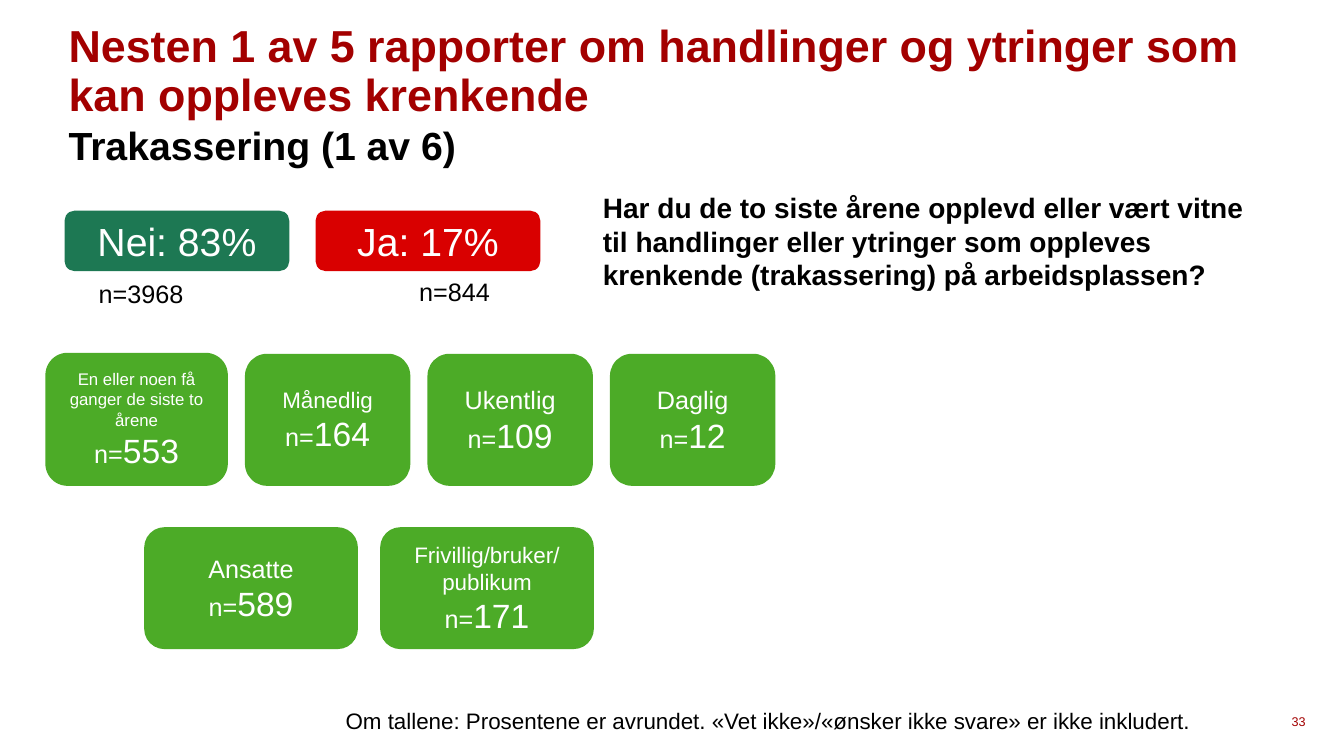
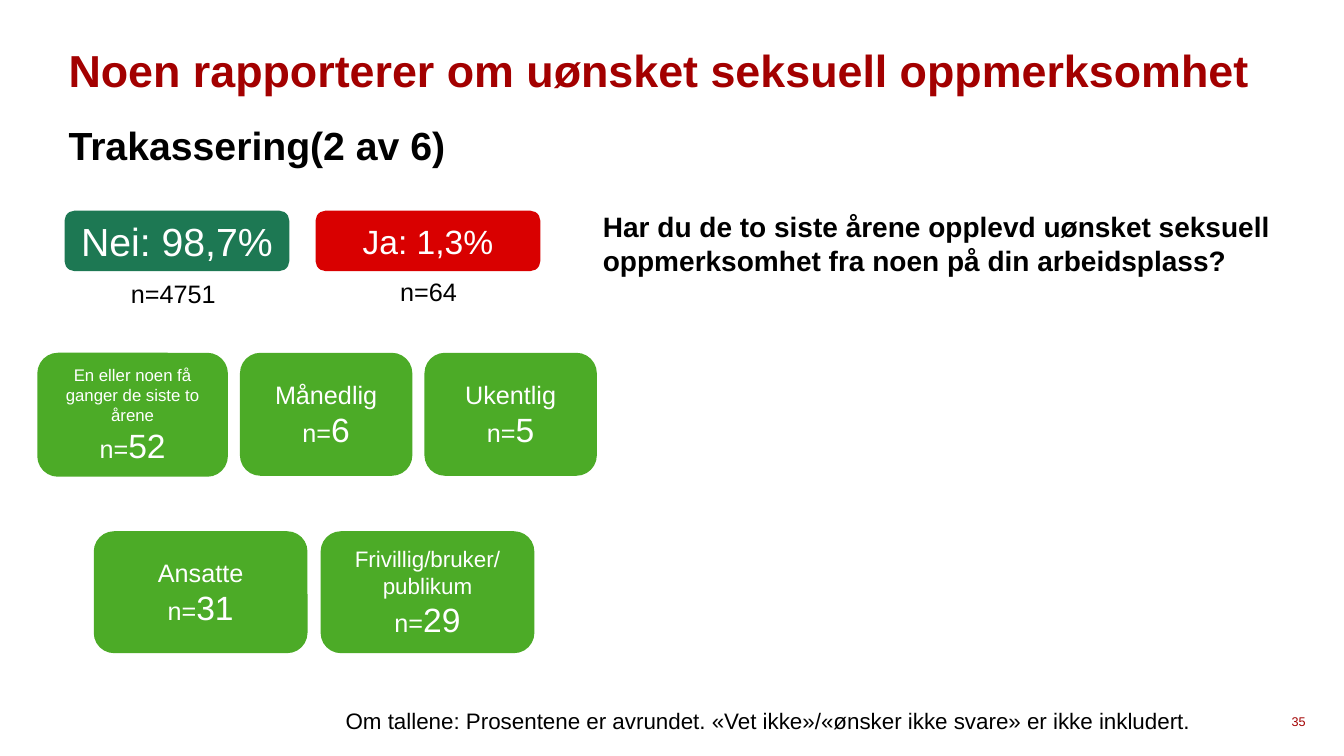
from dataclasses import dataclass

from pptx import Presentation
from pptx.dml.color import RGBColor
from pptx.enum import shapes, text
from pptx.util import Inches, Pt

FONT = "Arial"
TITLE_RED, YES_RED = "A30000", "D90000"
NO_GREEN, CARD_GREEN = "1D7853", "4CAB27"
BLACK, WHITE = "000000", "FFFFFF"
FOOTNOTE = (
    "Om tallene: Prosentene er avrundet. «Vet ikke»/«ønsker ikke svare» "
    "er ikke inkludert."
)
ROUNDED = shapes.MSO_SHAPE.ROUNDED_RECTANGLE
ALTERNATE = shapes.MSO_SHAPE.FLOWCHART_ALTERNATE_PROCESS


@dataclass(frozen=True)
class Area:
    left: float
    top: float
    width: float
    height: float

    def lengths(self):
        return [Inches(n) for n in (self.left, self.top, self.width, self.height)]


@dataclass(frozen=True)
class Span:
    words: str
    size: float
    colour: str = BLACK
    bold: bool = False


@dataclass(frozen=True)
class Card:
    caption: tuple[str, ...]
    size: float
    count: int


@dataclass(frozen=True)
class CardRow:
    first: Area
    step: float
    shape: shapes.MSO_SHAPE
    cards: tuple[Card, ...]


@dataclass(frozen=True)
class Answer:
    label: str
    size: float
    count: int
    count_left: float


@dataclass(frozen=True)
class Survey:
    title: str
    subtitle: str
    number: int
    question: str
    question_top: float
    no: Answer
    yes: Answer
    rows: tuple[CardRow, ...]


def colour_of(value):
    return RGBColor.from_string(value)


def write(frame, lines, align=text.PP_ALIGN.LEFT, spacing=None):
    """Write each list of spans as one paragraph."""
    for index, spans in enumerate(lines):
        para = frame.paragraphs[0] if index == 0 else frame.add_paragraph()
        para.alignment = align
        if spacing:
            para.line_spacing = spacing
        for span in spans:
            run = para.add_run()
            run.text = span.words
            run.font.name = FONT
            run.font.size = Pt(span.size)
            run.font.bold = span.bold
            run.font.color.rgb = colour_of(span.colour)


def add_text(page, area: Area, span: Span, inset=False,
             anchor=text.MSO_ANCHOR.TOP, spacing=None):
    frame = page.shapes.add_textbox(*area.lengths()).text_frame
    frame.word_wrap = True
    frame.vertical_anchor = anchor
    if not inset:
        frame.margin_left = frame.margin_right = 0
        frame.margin_top = frame.margin_bottom = 0
    write(frame, [[span]], spacing=spacing)


def add_tile(page, area: Area, shape, fill: str, lines):
    tile = page.shapes.add_shape(shape, *area.lengths())
    tile.shadow.inherit = False
    tile.fill.solid()
    tile.fill.fore_color.rgb = colour_of(fill)
    tile.line.fill.background()
    tile.text_frame.word_wrap = True
    tile.text_frame.vertical_anchor = text.MSO_ANCHOR.MIDDLE
    write(tile.text_frame, lines, text.PP_ALIGN.CENTER)


def add_answer(page, answer: Answer, left: float, fill: str, count_top: float):
    add_tile(page, Area(left, 2.09, 2.23, 0.6), ROUNDED, fill,
             [[Span(answer.label, answer.size, WHITE)]])
    add_text(page, Area(answer.count_left, count_top, 1.1, 0.4),
             Span(f"n={answer.count}", 18), inset=True)


def add_row(page, row: CardRow):
    for index, card in enumerate(row.cards):
        area = Area(row.first.left + index * row.step, row.first.top,
                    row.first.width, row.first.height)
        lines = [[Span(words, card.size, WHITE)] for words in card.caption]
        lines.append([Span("n=", 18, WHITE), Span(str(card.count), 24, WHITE)])
        add_tile(page, area, row.shape, CARD_GREEN, lines)


def add_survey(deck, survey: Survey):
    page = deck.slides.add_slide(deck.slide_layouts[6])
    middle = text.MSO_ANCHOR.MIDDLE
    add_text(page, Area(0.68, 0.25, 12.29, 0.94),
             Span(survey.title, 32, TITLE_RED, True), anchor=middle, spacing=0.9)
    add_text(page, Area(0.68, 1.2, 11.97, 0.71),
             Span(survey.subtitle, 28, bold=True))
    add_text(page, Area(5.98, survey.question_top, 6.67, 0.97),
             Span(survey.question, 20, bold=True))
    add_answer(page, survey.no, 0.64, NO_GREEN, 2.71)
    add_answer(page, survey.yes, 3.13, YES_RED, 2.69)
    for row in survey.rows:
        add_row(page, row)
    add_text(page, Area(3.33, 6.97, 8.68, 0.37), Span(FOOTNOTE, 16), inset=True)
    add_text(page, Area(12.81, 7.04, 0.38, 0.23),
             Span(str(survey.number), 9, TITLE_RED), anchor=middle)


def seldom(area: Area, count: int) -> CardRow:
    caption = ("En eller noen få ganger de siste to årene",)
    return CardRow(area, 0, ALTERNATE, (Card(caption, 12, count),))


def sources(left: float, top: float, step: float, staff: int, others: int) -> CardRow:
    """Row telling who was behind the incidents."""
    return CardRow(Area(left, top, 2.12, 1.21), step, ALTERNATE, (
        Card(("Ansatte",), 18, staff),
        Card(("Frivillig/bruker/", "publikum"), 16, others),
    ))


SURVEYS = (
    Survey(
        title="Nesten 1 av 5 rapporter om handlinger og ytringer som "
              "kan oppleves krenkende",
        subtitle="Trakassering (1 av 6)",
        number=33,
        question="Har du de to siste årene opplevd eller vært vitne til "
                 "handlinger eller ytringer som oppleves krenkende "
                 "(trakassering) på arbeidsplassen?",
        question_top=1.89,
        no=Answer("Nei: 83%", 28, 3968, 0.88),
        yes=Answer("Ja: 17%", 28, 844, 4.06),
        rows=(
            seldom(Area(0.45, 3.5, 1.81, 1.32), 553),
            CardRow(Area(2.43, 3.51, 1.64, 1.31), 1.81, ROUNDED, (
                Card(("Månedlig",), 16, 164),
                Card(("Ukentlig",), 18, 109),
                Card(("Daglig",), 18, 12),
            )),
            sources(1.43, 5.23, 2.34, 589, 171),
        ),
    ),
    Survey(
        title="Noen rapporterer om uønsket seksuell oppmerksomhet",
        subtitle="Trakassering(2 av 6)",
        number=35,
        question="Har du de to siste årene opplevd uønsket seksuell "
                 "oppmerksomhet fra noen på din arbeidsplass?",
        question_top=2.08,
        no=Answer("Nei: 98,7%", 28, 4751, 1.2),
        yes=Answer("Ja: 1,3%", 24, 64, 3.87),
        rows=(
            seldom(Area(0.37, 3.5, 1.89, 1.23), 52),
            CardRow(Area(2.38, 3.5, 1.71, 1.22), 1.83, ROUNDED, (
                Card(("Månedlig",), 18, 6),
                Card(("Ukentlig",), 18, 5),
            )),
            sources(0.93, 5.27, 2.25, 31, 29),
        ),
    ),
)


def main():
    deck = Presentation()
    deck.slide_width, deck.slide_height = Inches(13.33), Inches(7.5)
    for survey in SURVEYS:
        add_survey(deck, survey)
    deck.save("out.pptx")


if __name__ == "__main__":
    main()
